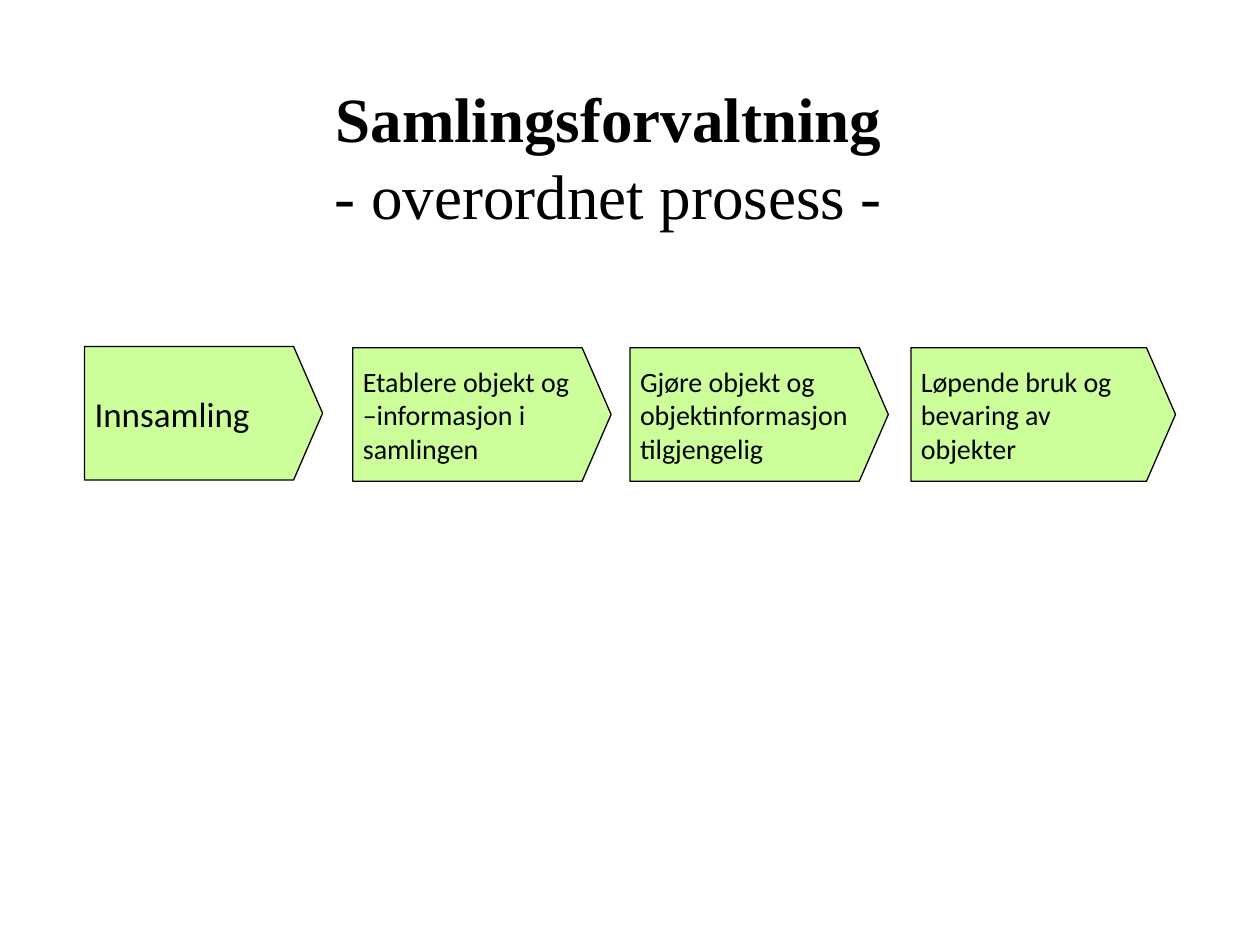
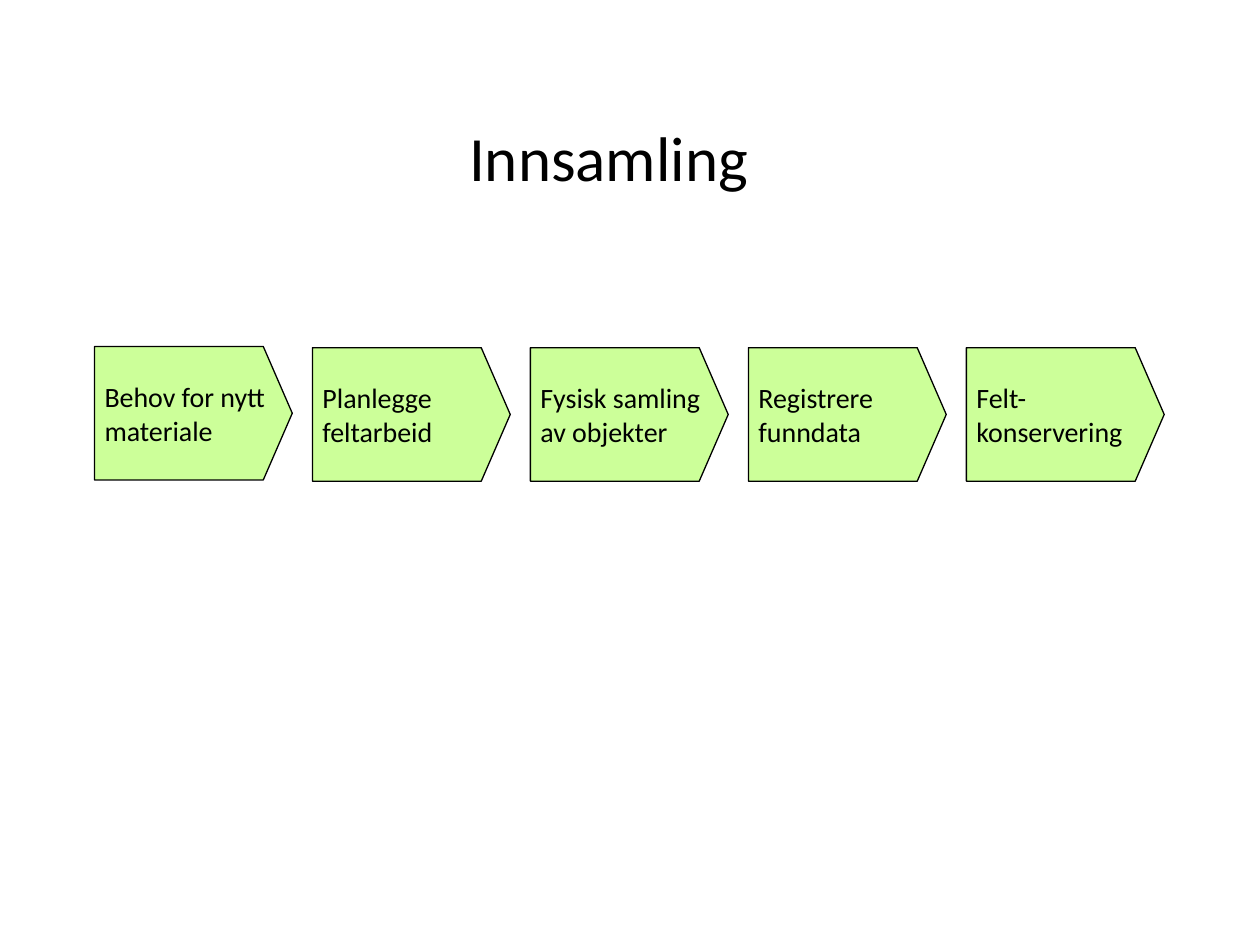
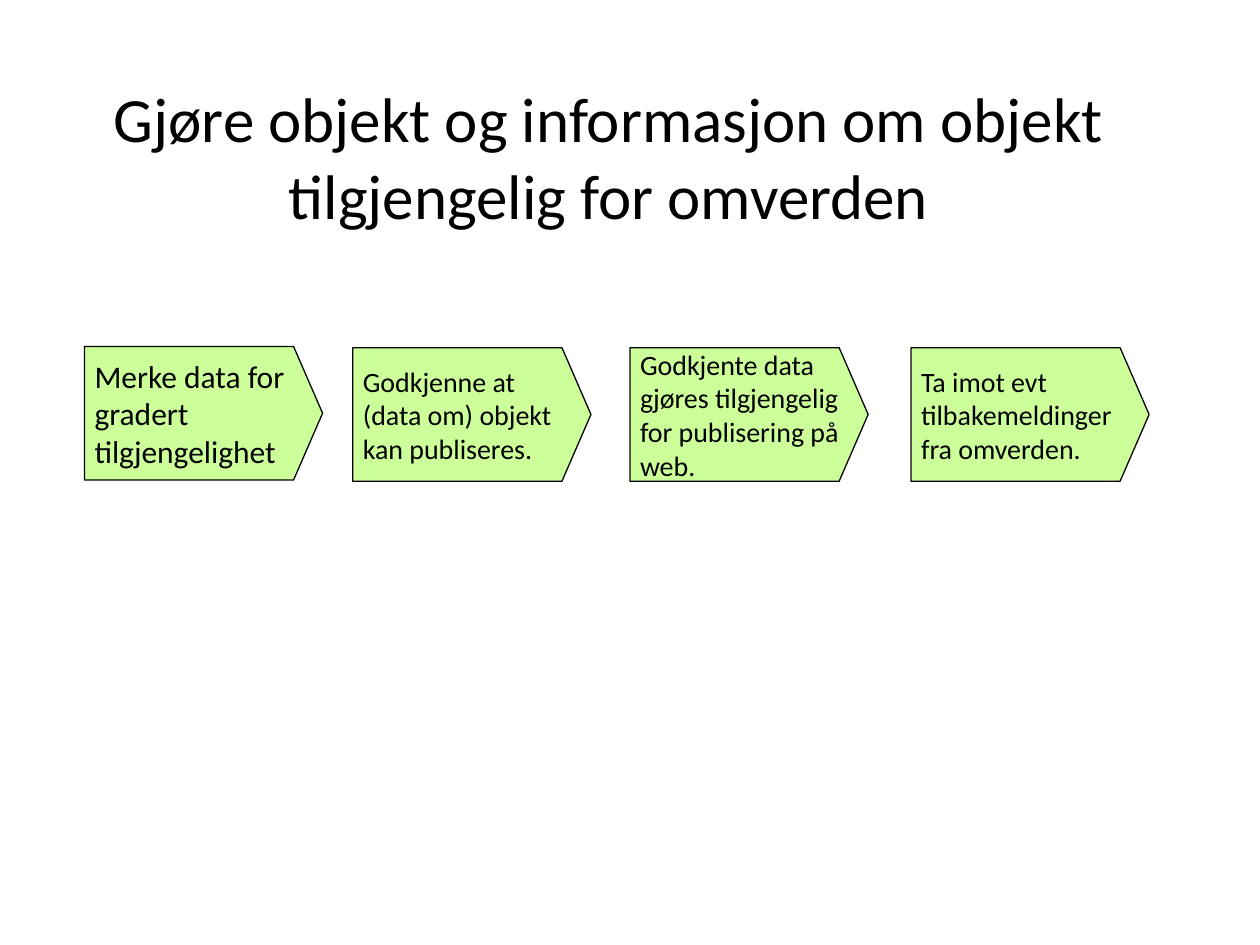
from dataclasses import dataclass

from pptx import Presentation
from pptx.dml.color import RGBColor
from pptx.enum.shapes import MSO_SHAPE
from pptx.enum.text import MSO_ANCHOR, MSO_AUTO_SIZE, PP_ALIGN
from pptx.slide import Slide
from pptx.text.text import _Paragraph as Para
from pptx.util import Inches, Pt

BLACK = RGBColor(0x00, 0x00, 0x00)
GREEN = RGBColor(0xCC, 0xFF, 0x99)
SANS = "Calibri"
SERIF = "Times New Roman"

TITLE_ONLY = 5
FOUR = (0.67, 2.8, 5, 7.23)
FIVE = tuple(0.75 + 1.73 * i for i in range(5))
FIRST_TOP, TOP = 2.75, 2.76
HEIGHT = 1.06
POINT = 0.217


@dataclass
class Line:
    text: str
    font: str = SANS
    bold: bool = False


@dataclass
class Step:
    text: str
    width: float = 1.89
    size: int = 16


@dataclass
class Flow:
    title: list[Line]
    lefts: tuple[float, ...]
    steps: list[Step]


FLOWS = [
    Flow(
        [Line("Samlingsforvaltning", SERIF, True),
         Line("- overordnet prosess -", SERIF)],
        FOUR,
        [Step("Innsamling", size=20),
         Step("Etablere objekt og –informasjon i samlingen", 2.05),
         Step("Gjøre objekt og objektinformasjon tilgjengelig", 2.05),
         Step("Løpende bruk og bevaring av objekter", 2.1)],
    ),
    Flow(
        [Line("Innsamling")],
        FIVE,
        [Step(text, 1.57) for text in (
            "Behov for nytt materiale",
            "Planlegge feltarbeid",
            "Fysisk samling av objekter",
            "Registrere funndata",
            "Felt-konservering",
        )],
    ),
    Flow(
        [Line("Gjøre objekt og informasjon om objekt "
              "tilgjengelig for omverden")],
        FOUR,
        [Step("Merke data for gradert tilgjengelighet", size=18),
         Step("Godkjenne at (data om) objekt kan publiseres."),
         Step("Godkjente data gjøres tilgjengelig for publisering på web."),
         Step("Ta imot evt tilbakemeldinger fra omverden.")],
    ),
]


def add_run(para: Para, line: Line, size: int) -> None:
    run = para.add_run()
    run.text = line.text
    run.font.name = line.font
    run.font.size = Pt(size)
    run.font.bold = line.bold
    run.font.color.rgb = BLACK


def set_title(slide: Slide, lines: list[Line]) -> None:
    title = slide.shapes.title
    title.left, title.top = Inches(0.33), Inches(0.61)
    title.width, title.height = Inches(9), Inches(1.25)
    frame = title.text_frame
    frame.auto_size = MSO_AUTO_SIZE.NONE
    frame.word_wrap = True
    frame.vertical_anchor = MSO_ANCHOR.MIDDLE
    para = frame.paragraphs[0]
    para.alignment = PP_ALIGN.CENTER
    para.line_spacing = Pt(44)
    for i, line in enumerate(lines):
        if i:
            para.add_line_break()
        add_run(para, line, 36)


def add_step(slide: Slide, step: Step, left: float, top: float) -> None:
    shape = slide.shapes.add_shape(
        MSO_SHAPE.PENTAGON, Inches(left), Inches(top),
        Inches(step.width), Inches(HEIGHT))
    shape.adjustments[0] = POINT
    shape.shadow.inherit = False
    shape.fill.solid()
    shape.fill.fore_color.rgb = GREEN
    shape.line.color.rgb = BLACK
    shape.line.width = Pt(0.75)
    frame = shape.text_frame
    frame.word_wrap = True
    frame.vertical_anchor = MSO_ANCHOR.MIDDLE
    frame.margin_left = frame.margin_right = Inches(0.08)
    frame.margin_top = frame.margin_bottom = Inches(0.04)
    para = frame.paragraphs[0]
    para.alignment = PP_ALIGN.LEFT
    add_run(para, Line(step.text), step.size)


def main() -> None:
    deck = Presentation()
    deck.slide_width, deck.slide_height = Inches(10), Inches(7.5)
    for flow in FLOWS:
        slide = deck.slides.add_slide(deck.slide_layouts[TITLE_ONLY])
        set_title(slide, flow.title)
        for i, (step, left) in enumerate(zip(flow.steps, flow.lefts)):
            add_step(slide, step, left, TOP if i else FIRST_TOP)
    deck.save("out.pptx")


if __name__ == "__main__":
    main()
